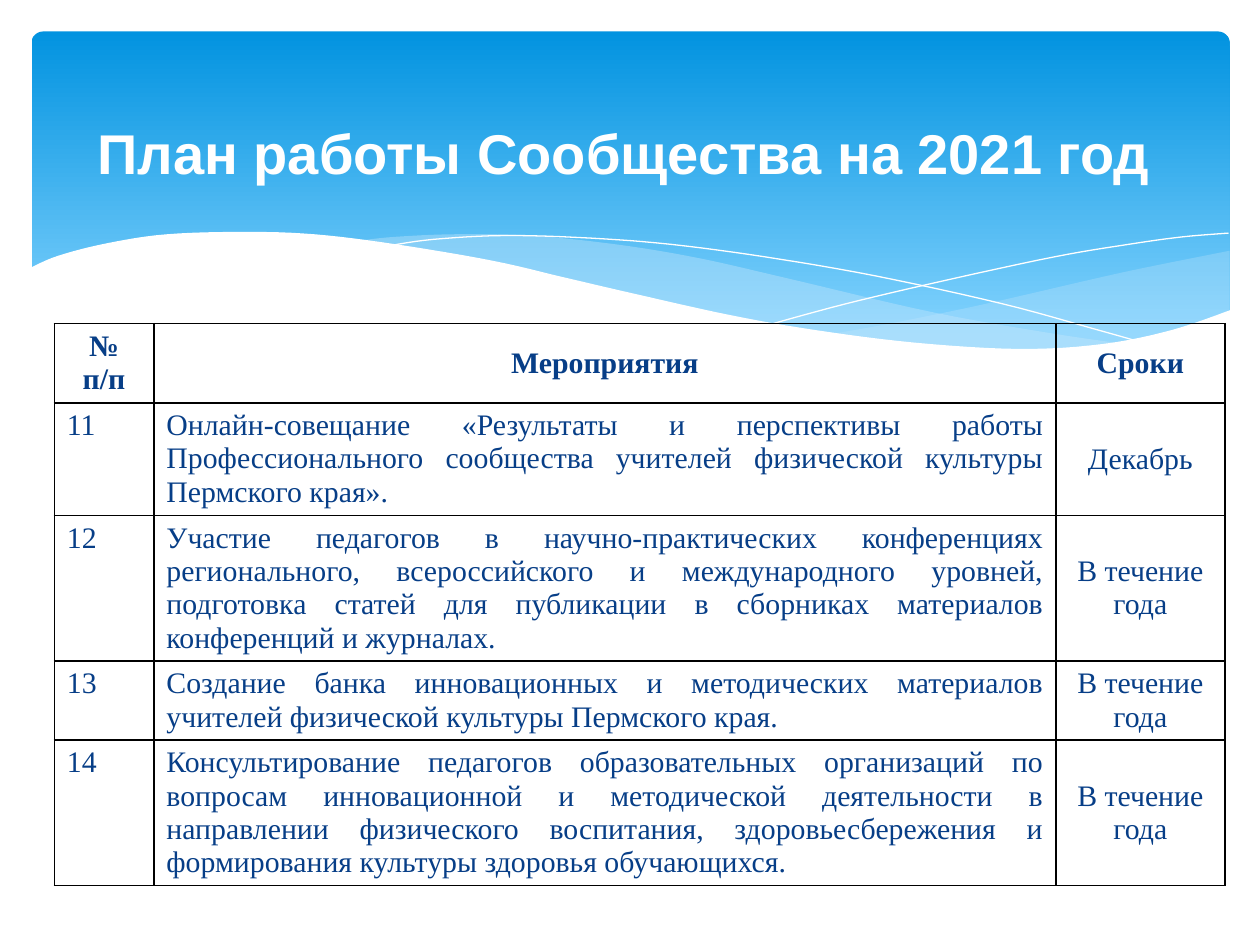
from lxml import etree
from pptx import Presentation
from pptx.dml.color import RGBColor
from pptx.enum.shapes import MSO_SHAPE
from pptx.enum.text import MSO_ANCHOR, PP_ALIGN
from pptx.oxml.ns import qn
from pptx.util import Pt

ROUNDED = MSO_SHAPE.ROUNDED_RECTANGLE
LEFT, CENTER, JUSTIFY = PP_ALIGN.LEFT, PP_ALIGN.CENTER, PP_ALIGN.JUSTIFY
TOP, MIDDLE = MSO_ANCHOR.TOP, MSO_ANCHOR.MIDDLE
TITLE_ONLY = 5

COLORS = {"sky": "0293E0", "pale": "83D3FE", "band": "C6E7FC",
          "white": "FFFFFF", "text": "073E87", "border": "000000"}

# Wave edges, in points from the top left corner of the banner
RIGHT_BAND = [
    [(684.7, 125.3), (634.3, 135.4), (601.9, 142.6), (542.9, 156.2), (490.3, 167),
     (457.9, 172.8)],
    [(457.9, 172.8), (489.6, 177.1), (527, 180.7), (568.1, 182.2), (609.8, 179.3),
     (645.1, 172.8), (684.7, 159.8)],
]
LEFT_BAND = [
    [(625, 178.6), (584.6, 172.8), (515.5, 160.6), (434.9, 141.8), (381.6, 129.6),
     (334.1, 121.7), (284.4, 116.6), (241.9, 115.9), (207.4, 117.4), (187.9, 119.5)],
    [(187.9, 119.5), (228.2, 125.3), (272.9, 133.9), (305.3, 141.8), (363.6, 154.8),
     (414.7, 165.6), (460.8, 173.5), (511.9, 180), (563, 182.2), (599, 181.4),
     (625, 178.6)],
]
FALLING_LINE = [
    [(204.5, 122.4), (229.7, 118.8), (270.7, 116.6), (319.7, 118.1), (365.8, 121.7),
     (419.8, 128.9), (482.4, 139.7), (554.4, 155.5), (607, 169.9), (635, 177.8)],
]
RISING_LINE = [
    [(423.4, 167), (465.8, 155.5), (520.6, 142.6), (583.9, 128.9), (626.4, 121.7),
     (657.4, 117.4), (684, 115.2)],
]
WHITE_WAVE = [
    [(-1.4, 135.4), (15.1, 128.2), (43.2, 121), (77, 115.9), (121, 114.5),
     (162, 115.9), (208.8, 121.7), (263.5, 131), (303.8, 140.4), (344.2, 149.8),
     (398.9, 162), (447.8, 170.6), (504.7, 177.8), (564.5, 181.4), (612, 178.6),
     (651.6, 170.6), (685.4, 159.1)],
    [(685.4, 218.9), (-1.4, 218.9)],
]

HEADER = ("№ п/п", "Мероприятия", "Сроки")
EVENTS = [
    ("11", "Онлайн-совещание «Результаты и перспективы работы Профессионального "
           "сообщества учителей физической культуры Пермского края».", "Декабрь"),
    ("12", "Участие педагогов в научно-практических конференциях регионального, "
           "всероссийского и международного уровней, подготовка статей для публикации "
           "в сборниках материалов конференций и журналах.", "В течение года"),
    ("13", "Создание банка инновационных и методических материалов учителей "
           "физической культуры Пермского края.", "В течение года"),
    ("14", "Консультирование педагогов образовательных организаций по вопросам "
           "инновационной и методической деятельности в направлении физического "
           "воспитания, здоровьесбережения и формирования культуры здоровья "
           "обучающихся.", "В течение года"),
]
COLUMN_WIDTHS = (56.9, 515.5, 96.5)
ROW_HEIGHTS = (45.2, 64.4, 83, 45.2, 83)


def color(name):
    return RGBColor.from_string(COLORS[name])


def smooth(knots, steps=6):
    """Sample a Catmull-Rom curve through the knots."""
    padded = [knots[0], *knots, knots[-1]]
    points = [knots[0]]
    for a, b, c, d in zip(padded, padded[1:], padded[2:], padded[3:]):
        for step in range(1, steps + 1):
            t = step / steps
            points.append(tuple(
                (2 * q + (r - p) * t + (2 * p - 5 * q + 4 * r - s) * t ** 2
                 + (3 * q - p - 3 * r + s) * t ** 3) / 2
                for p, q, r, s in zip(a, b, c, d)))
    return points


def add_wave(page, box, edges, fill=None, alpha=None):
    """Draw a filled wave, or an open hairline when no fill is given."""
    left, top = box[:2]
    points = [(Pt(left + x), Pt(top + y)) for edge in edges for x, y in smooth(edge)]
    builder = page.shapes.build_freeform(*points[0])
    builder.add_line_segments(points[1:], close=fill is not None)
    wave = builder.convert_to_shape()
    wave.shadow.inherit = False
    if fill is None:
        wave.fill.background()
        wave.line.color.rgb = color("white")
        wave.line.width = Pt(0)
        return
    wave.fill.solid()
    wave.fill.fore_color.rgb = color(fill)
    wave.line.fill.background()
    if alpha:
        tint = wave.element.spPr.find(qn("a:solidFill")).find(qn("a:srgbClr"))
        etree.SubElement(tint, qn("a:alpha"), val=str(alpha * 1000))


def add_banner(page, box):
    banner = page.shapes.add_shape(ROUNDED, *map(Pt, box))
    banner.adjustments[0] = 0.034
    banner.shadow.inherit = False
    banner.line.fill.background()
    banner.fill.gradient()
    banner.fill.gradient_angle = 270
    for stop, name, position in zip(banner.fill.gradient_stops, ("sky", "pale"), (0, 0.9)):
        stop.color.rgb = color(name)
        stop.position = position
    add_wave(page, box, RIGHT_BAND, "band", 29)
    add_wave(page, box, LEFT_BAND, "band", 40)
    add_wave(page, box, FALLING_LINE)
    add_wave(page, box, RISING_LINE)
    add_wave(page, box, WHITE_WAVE, "white")


def add_span(para, text, font, size, name, bold):
    span = para.add_run()
    span.text = text
    span.font.name = font
    span.font.size = Pt(size)
    span.font.bold = bold
    span.font.color.rgb = color(name)


def place_title(page, box, text):
    title = page.shapes.title
    title.left, title.top, title.width, title.height = map(Pt, box)
    title.element.getparent().append(title.element)  # bring in front of the banner
    title.text_frame.vertical_anchor = MIDDLE
    para = title.text_frame.paragraphs[0]
    para.alignment = CENTER
    add_span(para, text, "Arial", 32, "white", True)


def set_borders(cell):
    properties = cell._tc.get_or_add_tcPr()
    for index, side in enumerate(("lnL", "lnR", "lnT", "lnB")):
        line = etree.Element(qn(f"a:{side}"), w=str(Pt(1)))
        fill = etree.SubElement(line, qn("a:solidFill"))
        etree.SubElement(fill, qn("a:srgbClr"), val=COLORS["border"])
        properties.insert(index, line)


def add_plan(page, box):
    rows = [HEADER, *EVENTS]
    table = page.shapes.add_table(len(rows), len(HEADER), *map(Pt, box)).table
    table.first_row = table.horz_banding = False
    for column, width in zip(table.columns, COLUMN_WIDTHS):
        column.width = Pt(width)
    for row, height in zip(table.rows, ROW_HEIGHTS):
        row.height = Pt(height)
    for i, texts in enumerate(rows):
        for j, text in enumerate(texts):
            cell = table.cell(i, j)
            cell.fill.background()
            set_borders(cell)
            header = i == 0
            cell.vertical_anchor = MIDDLE if header or j == 2 else TOP
            para = cell.text_frame.paragraphs[0]
            para.alignment = CENTER if header else (LEFT, JUSTIFY, CENTER)[j]
            add_span(para, text, "Times New Roman", 17, "text", header)


def main():
    deck = Presentation()
    deck.slide_width, deck.slide_height = Pt(720), Pt(540)
    page = deck.slides.add_slide(deck.slide_layouts[TITLE_ONLY])
    add_banner(page, (18, 18, 684.7, 194.4))
    place_title(page, (19.4, 37.4, 674.6, 98.6), "План работы Сообщества на 2021 год")
    add_plan(page, (31, 185, sum(COLUMN_WIDTHS), sum(ROW_HEIGHTS)))
    deck.save("out.pptx")


if __name__ == "__main__":
    main()
